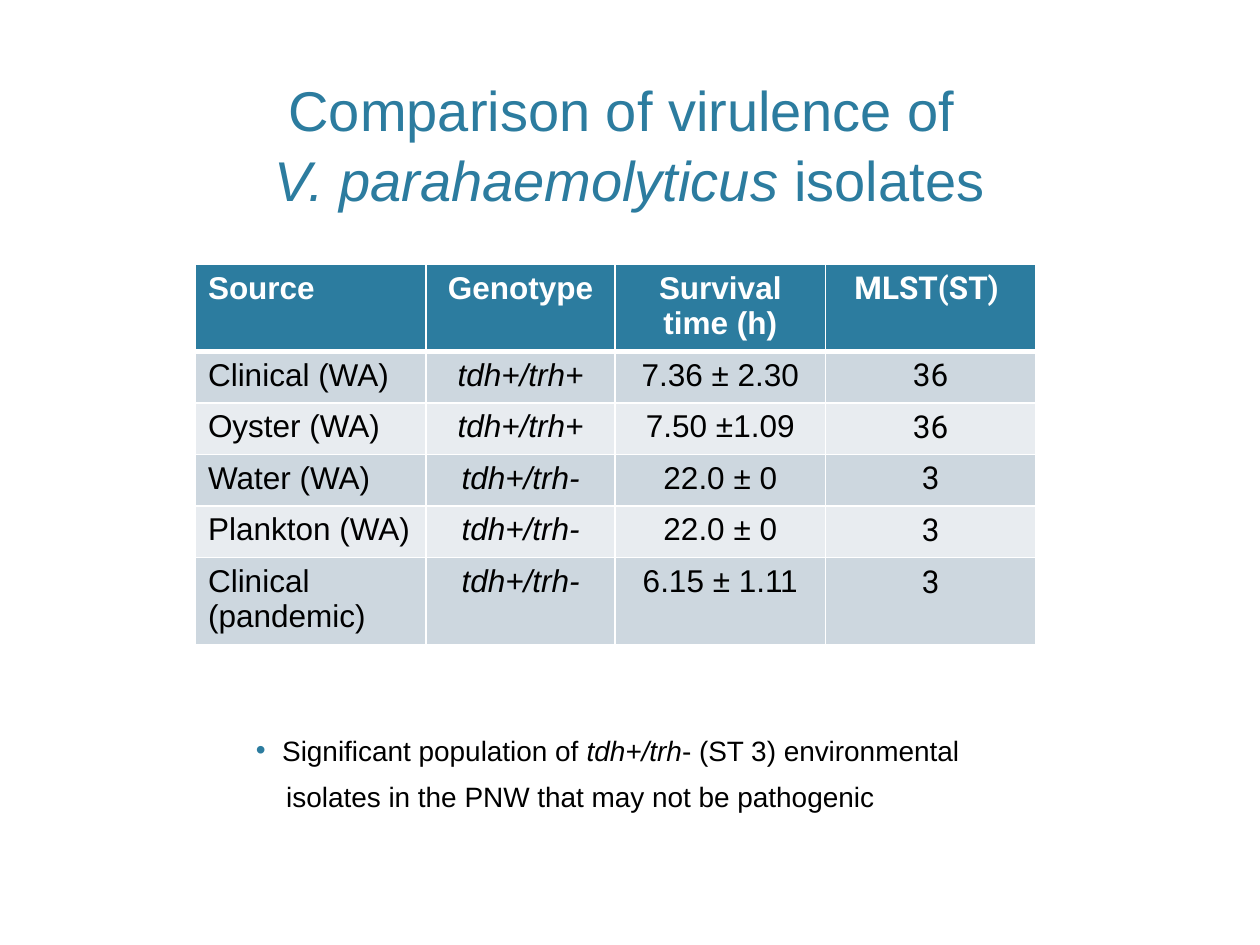
from lxml.etree import SubElement
from pptx import Presentation
from pptx.dml.color import RGBColor
from pptx.enum.text import MSO_ANCHOR, MSO_AUTO_SIZE, PP_ALIGN
from pptx.oxml.ns import qn
from pptx.util import Cm, Pt

COLORS = {
    "teal": "2C7C9F",
    "white": "FFFFFF",
    "black": "000000",
    "band_dark": "CDD7DF",
    "band_light": "E8ECF0",
}
HEADERS = ["Source", "Genotype", "Survival time (h)", "MLST(ST) "]
ISOLATES = [
    ["Clinical (WA)", "tdh+/trh+", "7.36 ± 2.30", "36"],
    ["Oyster (WA)", "tdh+/trh+", "7.50 ±1.09", "36"],
    ["Water (WA)", "tdh+/trh-", "22.0 ± 0", "3"],
    ["Plankton (WA)", "tdh+/trh-", "22.0 ± 0", "3"],
    ["Clinical (pandemic)", "tdh+/trh-", "6.15 ± 1.11", "3"],
]


def rgb(name):
    """Return the named colour."""
    return RGBColor.from_string(COLORS[name])


def add_text(p, text, size=18, font="Arial", color="black", bold=False, italic=False):
    """Add a formatted run to a paragraph."""
    r = p.add_run()
    r.text = text
    r.font.size, r.font.name = Pt(size), font
    r.font.bold, r.font.italic = bold, italic
    r.font.color.rgb = rgb(color)


def set_borders(cell, bottom):
    """Draw white borders around a cell, with the given bottom width in points."""
    tc_pr = cell._tc.get_or_add_tcPr()
    widths = {"a:lnL": 1, "a:lnR": 1, "a:lnT": 1, "a:lnB": bottom}
    for i, (tag, width) in enumerate(widths.items()):
        ln = SubElement(tc_pr, qn(tag), w=str(Pt(width)))
        SubElement(SubElement(ln, qn("a:solidFill")), qn("a:srgbClr"), val=COLORS["white"])
        tc_pr.insert(i, ln)


def set_bullet(p, left, hanging):
    """Give a paragraph a teal bullet with a hanging indent."""
    p_pr = p._p.get_or_add_pPr()
    p_pr.set("marL", str(left))
    p_pr.set("indent", str(-hanging))
    SubElement(SubElement(p_pr, qn("a:buClr")), qn("a:srgbClr"), val=COLORS["teal"])
    SubElement(p_pr, qn("a:buFont"), typeface="Arial")
    SubElement(p_pr, qn("a:buChar"), char="•")


def add_title(slide, x, y, w, h):
    """Place and format the title."""
    sp = slide.shapes.title
    sp.left, sp.top, sp.width, sp.height = x, y, w, h
    tf = sp.text_frame
    tf.auto_size, tf.vertical_anchor = MSO_AUTO_SIZE.NONE, MSO_ANCHOR.BOTTOM
    p = tf.paragraphs[0]
    p.alignment, p.line_spacing = PP_ALIGN.CENTER, 1.05
    add_text(p, "Comparison of virulence of ", size=32, color="teal")
    p.add_line_break()
    add_text(p, "V. parahaemolyticus ", size=32, color="teal", italic=True)
    add_text(p, "isolates", size=32, color="teal")


def add_isolate_table(slide, x, y, col_widths, row_heights):
    """Add the table of isolates."""
    rows = [HEADERS] + ISOLATES
    table = slide.shapes.add_table(
        len(rows), len(HEADERS), x, y, sum(col_widths), sum(row_heights)
    ).table
    for column, width in zip(table.columns, col_widths):
        column.width = width
    for i, (values, height) in enumerate(zip(rows, row_heights)):
        table.rows[i].height = height
        header = i == 0
        fill = "teal" if header else "band_dark" if i % 2 else "band_light"
        for j, value in enumerate(values):
            cell = table.cell(i, j)
            cell.fill.solid()
            cell.fill.fore_color.rgb = rgb(fill)
            set_borders(cell, bottom=3 if header else 1)
            p = cell.text_frame.paragraphs[0]
            p.alignment = PP_ALIGN.CENTER if j else PP_ALIGN.LEFT
            add_text(p, value, font="Roboto" if j == 3 else "Arial", bold=header,
                     color="white" if header else "black", italic=j == 1 and not header)


def add_conclusion(slide, x, y, w, h):
    """Add the bulleted conclusion below the table."""
    tf = slide.shapes.add_textbox(x, y, w, h).text_frame
    tf.word_wrap = True
    first, second = tf.paragraphs[0], tf.add_paragraph()
    for p in (first, second):
        p.line_spacing, p.space_after = 1.05, Pt(6)
    set_bullet(first, Cm(0.79), Cm(0.53))
    add_text(first, "Significant population of ", size=16)
    add_text(first, "tdh+/trh", size=16, italic=True)
    add_text(first, "- (ST 3) environmental", size=16)
    second._p.get_or_add_pPr().set("marL", str(Cm(0.87)))
    add_text(second, "isolates in the PNW that may not be pathogenic", size=16)


def main():
    """Build and save the slide."""
    prs = Presentation()
    prs.slide_width, prs.slide_height = Cm(25.4), Cm(19.05)
    slide = prs.slides.add_slide(prs.slide_layouts[5])
    add_title(slide, Cm(1.52), Cm(0.71), Cm(22.35), Cm(3.71))
    add_isolate_table(
        slide, Cm(3.94), Cm(5.33),
        col_widths=[Cm(4.65), Cm(3.81), Cm(4.24), Cm(4.24)],
        row_heights=[Cm(1.75)] + [Cm(1.04)] * 4 + [Cm(1.75)],
    )
    add_conclusion(slide, Cm(4.65), Cm(14.63), Cm(16.03), Cm(1.83))
    prs.save("out.pptx")


if __name__ == "__main__":
    main()
